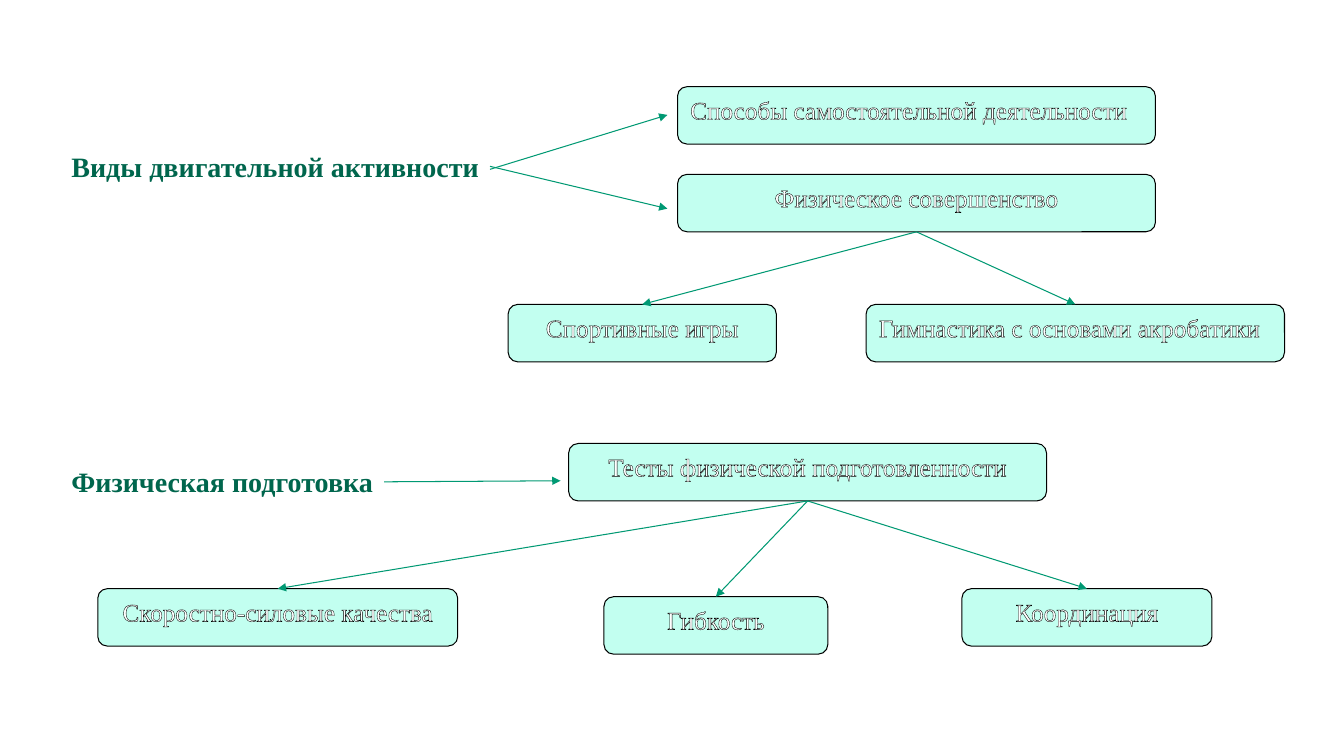
import pptx
import pptx.dml.color
import pptx.enum.shapes
import pptx.enum.text
import pptx.oxml
import pptx.oxml.ns
import pptx.util
from lxml import etree

PX = 9144  # EMU in one px, 100 px to the inch
FONT = "Times New Roman"
BOX_HEIGHT = 57
TOP, BOTTOM, RIGHT = 0, 2, 3  # connection sites
LEFT_ALIGNED = pptx.enum.text.PP_ALIGN.LEFT
CENTERED = pptx.enum.text.PP_ALIGN.CENTER


def px(length):
    return pptx.util.Emu(length * PX)


def color(hex_string):
    return pptx.dml.color.RGBColor.from_string(hex_string)


def set_font(paragraph, size, hex_string, bold=False):
    paragraph.font.name = FONT
    paragraph.font.size = pptx.util.Pt(size)
    paragraph.font.bold = bold
    paragraph.font.color.rgb = color(hex_string)


def add_heading(slide, left, top, width, text):
    shape = slide.shapes.add_textbox(px(left), px(top), px(width), px(44))
    frame = shape.text_frame
    frame.word_wrap = False
    frame.auto_size = pptx.enum.text.MSO_AUTO_SIZE.SHAPE_TO_FIT_TEXT
    frame.text = text
    set_font(frame.paragraphs[0], 20, "00664D", bold=True)
    return shape


def outline_text(run):
    outline = pptx.oxml.parse_xml(
        f'<a:ln {pptx.oxml.ns.nsdecls("a")} w="9525"><a:solidFill>'
        '<a:srgbClr val="000000"/></a:solidFill></a:ln>')
    run._r.get_or_add_rPr().insert(0, outline)


def add_box(slide, left, top, width, text, alignment=CENTERED):
    shape = slide.shapes.add_shape(
        pptx.enum.shapes.MSO_SHAPE.ROUNDED_RECTANGLE,
        px(left), px(top), px(width), px(BOX_HEIGHT))
    shape.shadow.inherit = False
    shape.fill.solid()
    shape.fill.fore_color.rgb = color("C2FFF0")
    shape.line.color.rgb = color("000000")
    shape.line.width = pptx.util.Pt(0.75)
    frame = shape.text_frame
    frame.word_wrap = True
    frame.vertical_anchor = pptx.enum.text.MSO_ANCHOR.TOP
    frame.text = text
    paragraph = frame.paragraphs[0]
    paragraph.alignment = alignment
    set_font(paragraph, 18, "FFFFFF")
    outline_text(paragraph.runs[0])
    return shape


def add_arrow(slide, start=(0, 0), end=(0, 0)):
    connector = slide.shapes.add_connector(
        pptx.enum.shapes.MSO_CONNECTOR.STRAIGHT,
        px(start[0]), px(start[1]), px(end[0]), px(end[1]))
    connector.line.color.rgb = color("009973")
    connector.line.width = pptx.util.Pt(0.75)
    head = etree.SubElement(connector.line._get_or_add_ln(),
                            pptx.oxml.ns.qn("a:tailEnd"))
    head.set("type", "triangle")
    etree.SubElement(connector._element.spPr, pptx.oxml.ns.qn("a:effectLst"))
    return connector


def add_branches(slide, parent, children):
    for child in children:
        arrow = add_arrow(slide)
        arrow.begin_connect(parent, BOTTOM)
        arrow.end_connect(child, TOP)


def add_activity_region(slide, left, top):
    # Heading and the two kinds of activity
    heading = add_heading(slide, left, top + 57, 425, "Виды двигательной активности")
    add_box(slide, left + 611, top, 474,
            "Способы самостоятельной деятельности", LEFT_ALIGNED)
    perfection = add_box(slide, left + 611, top + 87, 474, "Физическое совершенство")

    # Branches of physical perfection
    branches = [
        add_box(slide, left + 443, top + 216, 266, "Спортивные игры"),
        add_box(slide, left + 798, top + 216, 415,
                "Гимнастика с основами акробатики", LEFT_ALIGNED),
    ]

    # Arrows
    add_arrow(slide, end=(left + 601, top + 121)).begin_connect(heading, RIGHT)
    add_arrow(slide, (left + 425, top + 82), (left + 601, top + 28))
    add_branches(slide, perfection, branches)


def add_training_region(slide, left, top):
    # Heading and the tests
    heading = add_heading(slide, left, top + 16, 320, "Физическая подготовка")
    tests = add_box(slide, left + 503, top, 474, "Тесты физической подготовленности")

    # Qualities under test
    qualities = [
        add_box(slide, left + 36, top + 144, 357, "Скоростно-силовые качества"),
        add_box(slide, left + 538, top + 152, 222, "Гибкость"),
        add_box(slide, left + 893, top + 144, 248, "Координация"),
    ]

    # Arrows
    add_arrow(slide, end=(left + 495, top + 37)).begin_connect(heading, RIGHT)
    add_branches(slide, tests, qualities)


def main():
    presentation = pptx.Presentation()
    presentation.slide_width = px(1333)
    presentation.slide_height = px(750)
    slide = presentation.slides.add_slide(presentation.slide_layouts[6])
    add_activity_region(slide, 61, 86)
    add_training_region(slide, 61, 440)
    presentation.save("out.pptx")


if __name__ == "__main__":
    main()
